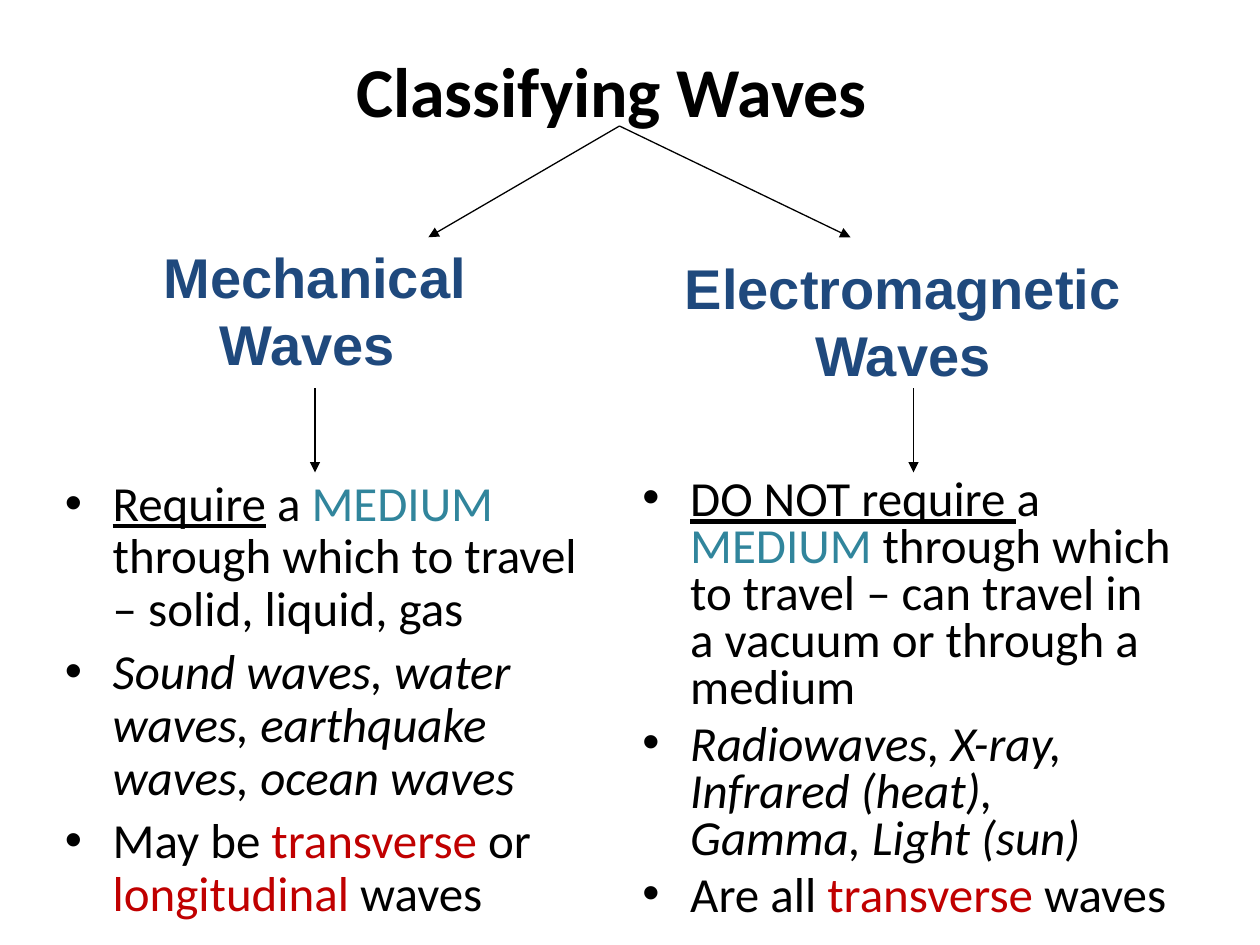
"""Builds the slide that classifies waves as mechanical or electromagnetic."""
from lxml.etree import SubElement
from pptx import Presentation
from pptx.dml.color import RGBColor
from pptx.enum.shapes import MSO_CONNECTOR as Connector
from pptx.enum.text import MSO_ANCHOR as Anchor, MSO_AUTO_SIZE as AutoSize, PP_ALIGN as Align
from pptx.oxml.ns import qn
from pptx.util import Inches, Pt

COLUMNS, ROWS = 120, 90
SLIDE_WIDTH, SLIDE_HEIGHT = Inches(10), Inches(7.5)
COLORS = {"text": "000000", "heading": "1F497D", "medium": "31859C", "kind": "C00000"}

MECHANICAL = [
    [("Require", "underline"), (" a ", ""), ("MEDIUM", "medium"),
     (" through which to travel – solid, liquid, gas", "")],
    [("Sound waves, water waves, earthquake waves, ocean waves", "italic")],
    [("May be ", ""), ("transverse", "kind"), (" or ", ""),
     ("longitudinal", "kind"), (" waves", "")],
]
ELECTROMAGNETIC = [
    [("DO NOT require ", "underline"), ("a ", ""), ("MEDIUM", "medium"),
     (" through which to travel – can travel in a vacuum or through a medium", "")],
    [("Radiowaves, X-ray, Infrared (heat), Gamma, Light (sun)", "italic")],
    [("Are all ", ""), ("transverse", "kind"), (" waves", "")],
]


def across(columns):
    return int(SLIDE_WIDTH * columns / COLUMNS)


def down(rows):
    return int(SLIDE_HEIGHT * rows / ROWS)


def grid_box(column, row, width, height):
    return across(column), down(row), across(width), down(height)


def format_font(font, name, size, color, bold=False):
    font.name, font.size, font.bold = name, Pt(size), bold
    font.color.rgb = RGBColor.from_string(COLORS[color])


def set_centered_lines(text_frame, lines, font_name, size, color):
    text_frame.word_wrap = True
    text_frame.auto_size = AutoSize.NONE
    text_frame.vertical_anchor = Anchor.MIDDLE
    text_frame.text = "\n".join(lines)
    for paragraph in text_frame.paragraphs:
        paragraph.alignment = Align.CENTER
        for run in paragraph.runs:
            format_font(run.font, font_name, size, color, bold=True)


def add_title(slide, text, box):
    title = slide.shapes.title
    title.left, title.top, title.width, title.height = box
    set_centered_lines(title.text_frame, [text], "Calibri", 40, "text")


def add_heading(slide, lines, box):
    heading = slide.shapes.add_textbox(*box)
    set_centered_lines(heading.text_frame, lines, "Arial", 32, "heading")


def add_bullet(paragraph):
    properties = paragraph._p.get_or_add_pPr()
    properties.set("marL", str(Inches(0.38)))
    properties.set("indent", str(Inches(-0.38)))
    SubElement(properties, qn("a:buFont"), typeface="Arial")
    SubElement(properties, qn("a:buChar"), char="•")


def add_bullet_list(slide, items, box, line_spacing):
    text_frame = slide.shapes.add_textbox(*box).text_frame
    text_frame.word_wrap = True
    for index, item in enumerate(items):
        paragraph = text_frame.add_paragraph() if index else text_frame.paragraphs[0]
        paragraph.line_spacing = line_spacing
        paragraph.space_before = Pt(5.6)
        add_bullet(paragraph)
        for text, style in item:
            run = paragraph.add_run()
            run.text = text
            format_font(run.font, "Calibri", 28, style if style in COLORS else "text")
            run.font.underline = style == "underline"
            run.font.italic = style == "italic"


def add_arrow(slide, start, end):
    (start_column, start_row), (end_column, end_row) = start, end
    arrow = slide.shapes.add_connector(
        Connector.STRAIGHT, across(start_column), down(start_row),
        across(end_column), down(end_row))
    arrow.line.width = Pt(0.75)
    arrow.line.color.rgb = RGBColor.from_string(COLORS["text"])
    SubElement(arrow.line._get_or_add_ln(), qn("a:tailEnd"), type="triangle")
    SubElement(arrow._element.spPr, qn("a:effectLst"))


def main():
    presentation = Presentation()
    presentation.slide_width, presentation.slide_height = SLIDE_WIDTH, SLIDE_HEIGHT
    slide = presentation.slides.add_slide(presentation.slide_layouts[5])
    add_title(slide, "Classifying Waves ", grid_box(5, 1, 108, 15))
    add_bullet_list(slide, MECHANICAL, grid_box(5, 45, 53, 45), 0.9)
    add_bullet_list(slide, ELECTROMAGNETIC, grid_box(60, 45, 53, 45), 0.8)
    add_heading(slide, ["Electromagnetic", " Waves "], grid_box(52, 23, 68, 15))
    add_heading(slide, ["Mechanical Waves "], grid_box(6, 22, 48, 15))
    for column in (30, 87):
        add_arrow(slide, (column, 37), (column, 45))
    for column in (40.8, 81):
        add_arrow(slide, (59, 12), (column, 22.6))
    presentation.save("out.pptx")


if __name__ == "__main__":
    main()
